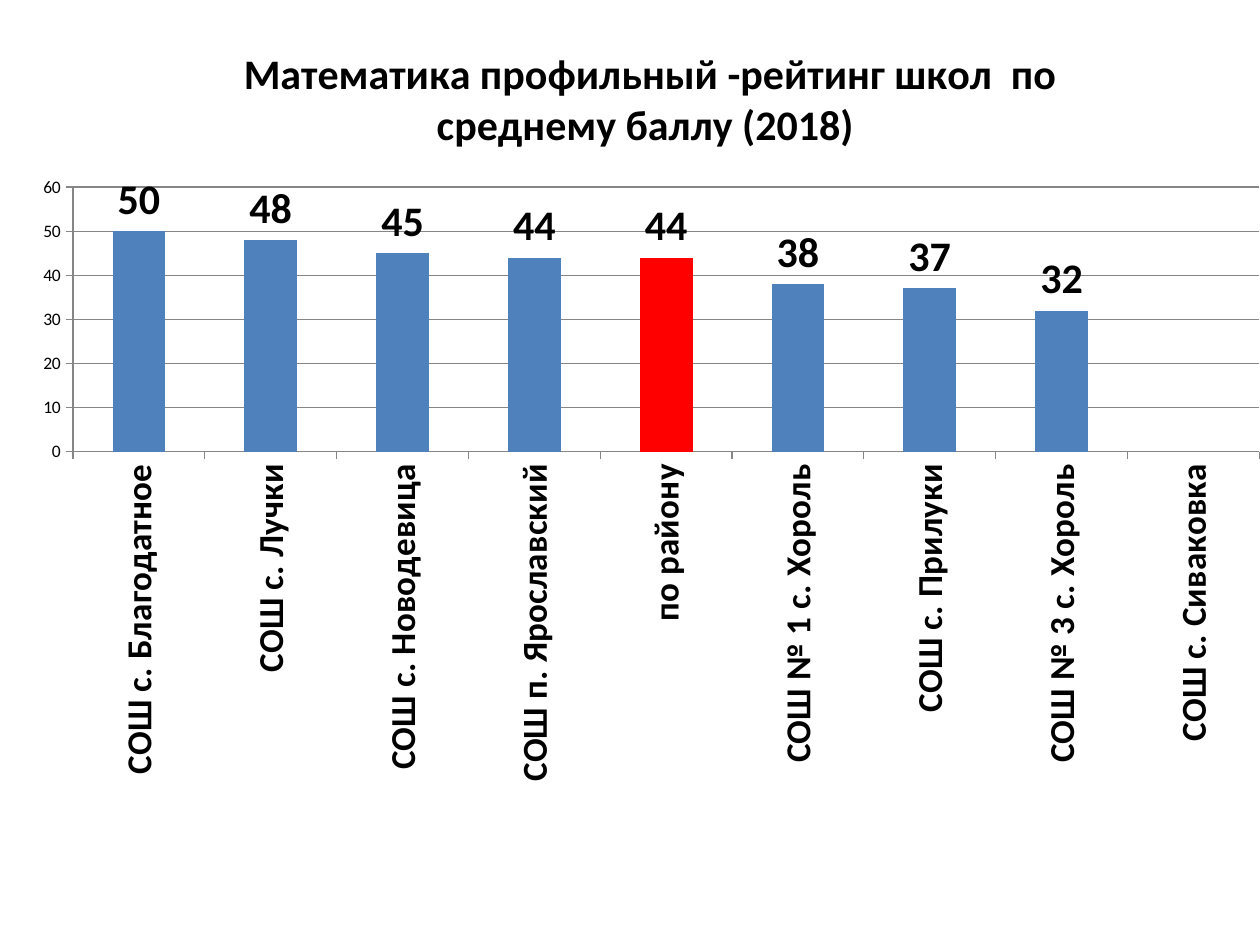
from lxml import etree
from pptx import Presentation
from pptx.chart.data import CategoryChartData
from pptx.dml.color import RGBColor
from pptx.enum.chart import XL_CHART_TYPE, XL_LABEL_POSITION, XL_TICK_MARK
from pptx.oxml.ns import qn
from pptx.util import Inches, Pt

COLUMN = XL_CHART_TYPE.COLUMN_CLUSTERED
LABEL_ABOVE = XL_LABEL_POSITION.OUTSIDE_END
TICK_OUT = XL_TICK_MARK.OUTSIDE
TICK_NONE = XL_TICK_MARK.NONE

FONT = "Calibri"
COLORS = {"text": "000000", "school": "4F81BD", "district": "FF0000", "line": "868686"}
TITLE = " Математика профильный -рейтинг школ  по среднему баллу (2018)"
DISTRICT = "по району"
SCORES = {
    "СОШ с. Благодатное": 50,
    "СОШ с. Лучки": 48,
    "СОШ с. Новодевица": 45,
    "СОШ п. Ярославский": 44,
    DISTRICT: 44,
    "СОШ № 1 с. Хороль": 38,
    "СОШ с. Прилуки": 37,
    "СОШ № 3 с. Хороль": 32,
    "СОШ с. Сиваковка": None,
}


def rgb(name):
    """Return the named palette colour."""
    return RGBColor.from_string(COLORS[name])


def format_font(font, size, bold=False, color="text"):
    """Set typeface, size, weight and colour of a font."""
    font.name = FONT
    font.size = Pt(size)
    font.bold = bold
    font.color.rgb = rgb(color)


def write_text(tf, text, **style):
    """Put formatted text in the first paragraph of a text frame."""
    r = tf.paragraphs[0].add_run()
    r.text = text
    format_font(r.font, **style)


def fill_solid(part, color):
    """Fill a series or point with a palette colour."""
    part.format.fill.solid()
    part.format.fill.fore_color.rgb = rgb(color)


def set_layout(parent, index, **values):
    """Give a chart part a manual layout at the given child index."""
    for old in parent.findall(qn("c:layout")):
        parent.remove(old)
    layout = etree.Element(qn("c:layout"))
    manual = etree.SubElement(layout, qn("c:manualLayout"))
    for tag, value in values.items():
        etree.SubElement(manual, qn(f"c:{tag}")).set("val", str(value))
    parent.insert(index, layout)


def format_axis(axis, size, bold=False):
    """Style the labels, ticks and line of an axis."""
    format_font(axis.tick_labels.font, size, bold)
    axis.major_tick_mark = TICK_OUT
    axis.minor_tick_mark = TICK_NONE
    axis.format.line.color.rgb = rgb("line")
    axis.format.line.width = Pt(0.75)


def add_rating_chart(s, left, top, width, height):
    """Add the school rating column chart in the given box."""
    data = CategoryChartData(number_format="General")
    data.categories = list(SCORES)
    data.add_series("Series 1", list(SCORES.values()))
    chart = s.shapes.add_chart(COLUMN, left, top, width, height, data).chart
    format_font(chart.font, 10)
    chart.has_legend = False

    chart.has_title = True
    title = chart.chart_title
    write_text(title.text_frame, TITLE, size=24, bold=True)
    chart_xml = chart.element.find(qn("c:chart"))
    set_layout(chart_xml.find(qn("c:title")), 1,
               xMode="edge", yMode="edge", x=0.18, y=0.04)

    category_axis, value_axis = chart.category_axis, chart.value_axis
    format_axis(category_axis, 20, bold=True)
    format_axis(value_axis, 10)
    value_axis.minimum_scale, value_axis.maximum_scale = 0, 60
    value_axis.major_unit = 10
    value_axis.has_major_gridlines = True
    value_axis.major_gridlines.format.line.color.rgb = rgb("line")

    plot = chart.plots[0]
    plot.gap_width = 150
    plot.vary_by_categories = False
    series = plot.series[0]
    fill_solid(series, "school")
    fill_solid(series.points[list(SCORES).index(DISTRICT)], "district")
    labels = series.data_labels
    labels.show_value = True
    labels.position = LABEL_ABOVE
    format_font(labels.font, 24, bold=True)

    plot_area = chart_xml.find(qn("c:plotArea"))
    set_layout(plot_area, 0, layoutTarget="inner", xMode="edge", yMode="edge",
               x=0.058, y=0.198, w=0.942, h=0.28)
    body = plot_area.find(f"{qn('c:catAx')}/{qn('c:txPr')}/{qn('a:bodyPr')}")
    body.set("rot", "-5400000")
    body.set("vert", "horz")


def main():
    """Build and save the one-slide presentation."""
    prs = Presentation()
    prs.slide_width, prs.slide_height = Inches(10), Inches(7.5)
    s = prs.slides.add_slide(prs.slide_layouts[6])
    add_rating_chart(s, Inches(0), Inches(0), prs.slide_width, prs.slide_height)
    prs.save("out.pptx")


if __name__ == "__main__":
    main()
